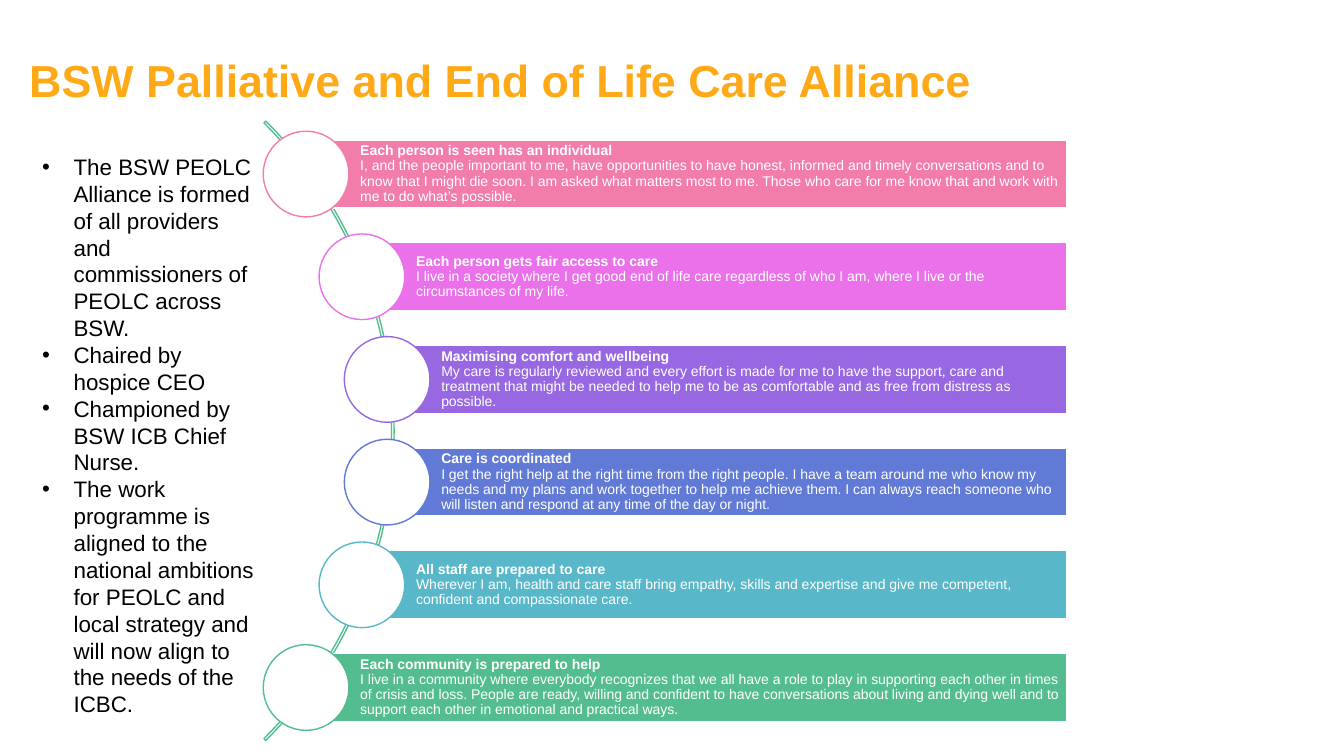
from math import sqrt

from lxml.etree import SubElement
from pptx import Presentation
from pptx.dml.color import RGBColor
from pptx.enum.shapes import MSO_SHAPE as SHAPE
from pptx.enum.text import MSO_ANCHOR as ANCHOR, MSO_AUTO_SIZE as AUTO, PP_ALIGN as ALIGN
from pptx.oxml.ns import qn
from pptx.util import Pt

FONT = "Arial"
WHITE = RGBColor(0xFF, 0xFF, 0xFF)
BLACK = RGBColor(0x00, 0x00, 0x00)
ORANGE = RGBColor(0xFE, 0xA9, 0x15)
PINK = RGBColor(0xF2, 0x7C, 0xAA)
MAGENTA = RGBColor(0xEA, 0x71, 0xEA)
PURPLE = RGBColor(0x97, 0x68, 0xE1)
BLUE = RGBColor(0x60, 0x7A, 0xD6)
TEAL = RGBColor(0x59, 0xB7, 0xCA)
GREEN = RGBColor(0x54, 0xBD, 0x8F)

TITLE = "BSW Palliative and End of Life Care Alliance"
POINTS = [
    "The BSW PEOLC Alliance is formed of all providers and commissioners of PEOLC across BSW.",
    "Chaired by hospice CEO",
    "Championed by BSW ICB Chief Nurse.",
    "The work programme is aligned to the national ambitions for PEOLC and local strategy "
    "and will now align to the needs of the ICBC.",
]
AMBITIONS = [
    (PINK, "Each person is seen has an individual",
     "I, and the people important to me, have opportunities to have honest, informed and timely "
     "conversations and to know that I might die soon. I am asked what matters most to me. "
     "Those who care for me know that and work with me to do what’s possible."),
    (MAGENTA, "Each person gets fair access to care",
     "I live in a society where I get good end of life care regardless of who I am, "
     "where I live or the circumstances of my life."),
    (PURPLE, "Maximising comfort and wellbeing",
     "My care is regularly reviewed and every effort is made for me to have the support, care and "
     "treatment that might be needed to help me to be as comfortable and as free from distress "
     "as possible."),
    (BLUE, "Care is coordinated",
     "I get the right help at the right time from the right people. I have a team around me who "
     "know my needs and my plans and work together to help me achieve them. I can always reach "
     "someone who will listen and respond at any time of the day or night."),
    (TEAL, "All staff are prepared to care",
     "Wherever I am, health and care staff bring empathy, skills and expertise and give me "
     "competent, confident and compassionate care."),
    (GREEN, "Each community is prepared to help",
     "I live in a community where everybody recognizes that we all have a role to play in "
     "supporting each other in times of crisis and loss. People are ready, willing and confident "
     "to have conversations about living and dying well and to support each other in emotional "
     "and practical ways."),
]

# Geometry in points: the circles sit on a curve around (ARC_X, ARC_Y)
ARC_X, ARC_Y, ARC_R = -31.3, 307.7, 312.8
CURVE_R = 310
STEP = 73.36
BAND_RIGHT, BAND_H = 762.1, 48.7
CIRCLE_D = 61.2


class SlideBuilder:
    def __init__(self, slide):
        self.s = slide

    def style(self, font, size, color, bold=False):
        font.name, font.size, font.bold = FONT, Pt(size), bold
        font.color.rgb = color

    def shape(self, kind, x, y, w, h, fill, line):
        sp = self.s.shapes.add_shape(kind, Pt(x), Pt(y), Pt(w), Pt(h))
        sp.shadow.inherit = False
        if fill is None:
            sp.fill.background()
        else:
            sp.fill.solid()
            sp.fill.fore_color.rgb = fill
        sp.line.color.rgb = line
        sp.line.width = Pt(1)
        return sp

    def title(self, text, x, y, w, h):
        sp = self.s.shapes.title
        sp.left, sp.top, sp.width, sp.height = Pt(x), Pt(y), Pt(w), Pt(h)
        tf = sp.text_frame
        tf.text = text
        tf.auto_size, tf.vertical_anchor = AUTO.NONE, ANCHOR.TOP
        p = tf.paragraphs[0]
        p.alignment, p.line_spacing = ALIGN.LEFT, 0.9
        self.style(p.runs[0].font, 32, ORANGE, bold=True)

    def bullets(self, items, x, y, w, h):
        tf = self.s.shapes.add_textbox(Pt(x), Pt(y), Pt(w), Pt(h)).text_frame
        tf.word_wrap, tf.auto_size = True, AUTO.SHAPE_TO_FIT_TEXT
        tf.text = "\n".join(items)
        indent = Pt(22.5)
        for p in tf.paragraphs:
            pPr = p._p.get_or_add_pPr()
            pPr.set("marL", str(indent))
            pPr.set("indent", str(-indent))
            SubElement(pPr, qn("a:buFont"), typeface=FONT)
            SubElement(pPr, qn("a:buChar"), char="•")
            self.style(p.runs[0].font, 16, BLACK)

    def arc(self, cx, cy, r, color):
        sp = self.shape(SHAPE.BLOCK_ARC, cx - r, cy - r, 2 * r, 2 * r, None, color)
        for i, value in enumerate((189, 27, 0.003)):
            sp.adjustments[i] = value

    def band(self, cx, cy, color, heading, body):
        sp = self.shape(SHAPE.RECTANGLE, cx, cy - BAND_H / 2, BAND_RIGHT - cx, BAND_H, color, WHITE)
        tf = sp.text_frame
        tf.word_wrap, tf.vertical_anchor = True, ANCHOR.MIDDLE
        tf.margin_left = Pt(38.7)
        tf.margin_top = tf.margin_right = tf.margin_bottom = Pt(2)
        p = tf.paragraphs[0]
        p.text = f"{heading}\v{body}"
        p.alignment, p.line_spacing = ALIGN.LEFT, 0.9
        for r, bold in zip(p.runs, (True, False)):
            self.style(r.font, 10, WHITE, bold)
        # Keep the line break at the size of the text
        SubElement(p._p.find(qn("a:br")), qn("a:rPr"), sz="1000")

    def circle(self, cx, cy, color):
        self.shape(SHAPE.OVAL, cx - CIRCLE_D / 2, cy - CIRCLE_D / 2, CIRCLE_D, CIRCLE_D, WHITE, color)


def main():
    prs = Presentation()
    prs.slide_width, prs.slide_height = Pt(960), Pt(540)
    b = SlideBuilder(prs.slides.add_slide(prs.slide_layouts[5]))

    # Title and introduction
    b.title(TITLE, 13.7, 38.2, 864.7, 49.7)
    b.bullets(POINTS, 23, 105.8, 167, 414.7)

    # Six ambitions along the arc
    b.arc(ARC_X, ARC_Y, ARC_R, GREEN)
    for i, (color, heading, body) in enumerate(AMBITIONS):
        dy = (i - (len(AMBITIONS) - 1) / 2) * STEP
        cx, cy = ARC_X + sqrt(CURVE_R ** 2 - dy ** 2), ARC_Y + dy
        b.band(cx, cy, color, heading, body)
        b.circle(cx, cy, color)

    prs.save("out.pptx")


if __name__ == "__main__":
    main()
